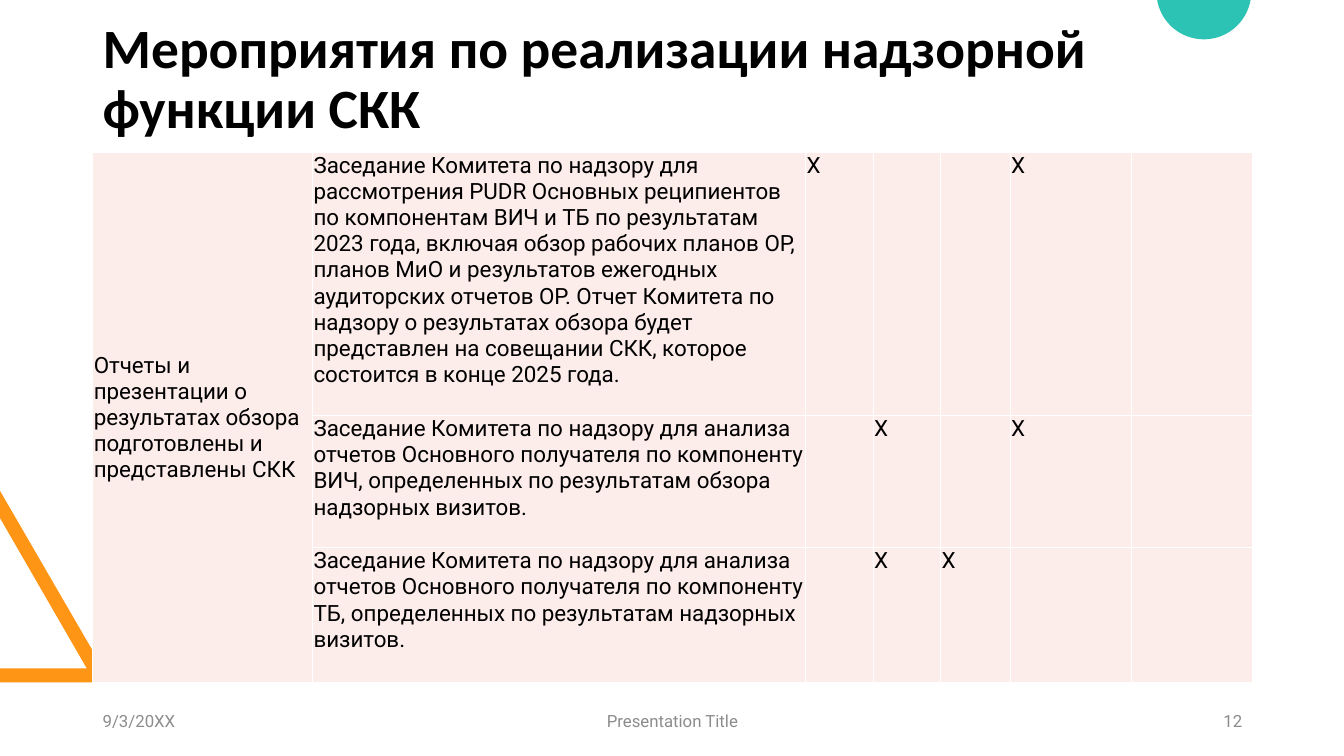
from dataclasses import dataclass
from math import acos, cos, pi, sin

from lxml.etree import SubElement
from pptx import Presentation
from pptx.dml.color import RGBColor
from pptx.enum.text import MSO_ANCHOR as Anchor, PP_ALIGN as Align
from pptx.oxml.ns import qn
from pptx.util import Inches, Pt


@dataclass(frozen=True)
class Theme:
    heading_font: str = "Calibri"
    body_font: str = "Roboto"
    heading_size: float = 39.6
    table_size: float = 16
    footer_size: float = 12
    text: str = "000000"
    muted: str = "8C8C8C"
    cell: str = "FCECEA"
    border: str = "FFFFFF"
    orange: str = "FF9514"
    teal: str = "2CC3B4"


THEME = Theme()
WIDTH, HEIGHT = 13.33, 7.5
LEFT, CONTENT_WIDTH = 0.92, 11.5

TITLE = "Мероприятия по реализации надзорной функции СКК"
RESULT = "Отчеты и презентации о результатах обзора подготовлены и представлены СКК"
ACTIVITIES = [
    ("Заседание Комитета по надзору для рассмотрения PUDR Основных реципиентов "
     "по компонентам ВИЧ и ТБ по результатам 2023 года, включая обзор рабочих планов ОР, "
     "планов МиО и результатов ежегодных аудиторских отчетов ОР. Отчет Комитета по надзору "
     "о результатах обзора будет представлен на совещании СКК, которое состоится в конце 2025 года.",
     {2, 5}),
    ("Заседание Комитета по надзору для анализа отчетов Основного получателя "
     "по компоненту ВИЧ, определенных по результатам обзора надзорных визитов.", {3, 5}),
    ("Заседание Комитета по надзору для анализа отчетов Основного получателя "
     "по компоненту ТБ, определенных по результатам надзорных визитов.", {3, 4}),
]
COLUMN_WIDTHS = [2.18, 4.89, 0.67, 0.67, 0.69, 1.2, 1.2]
ROW_HEIGHTS = [2.61, 1.31, 1.31]


def style_text(text_frame, font, size, color, bold=False):
    for paragraph in text_frame.paragraphs:
        for run in paragraph.runs:
            run.font.name = font
            run.font.size = Pt(size)
            run.font.bold = bold
            run.font.color.rgb = RGBColor.from_string(color)


def add_text(slide, box, text, font, size, color, align=Align.LEFT, bold=False):
    shape = slide.shapes.add_textbox(*map(Inches, box))
    frame = shape.text_frame
    frame.word_wrap = True
    frame.vertical_anchor = Anchor.MIDDLE
    frame.text = text
    frame.paragraphs[0].alignment = align
    style_text(frame, font, size, color, bold)
    return frame


def add_outline(slide, contours, color):
    (start, *rest), *holes = contours
    builder = slide.shapes.build_freeform(*map(Inches, start), scale=1.0)
    builder.add_line_segments([tuple(map(Inches, point)) for point in rest])
    for first, *others in holes:
        builder.move_to(*map(Inches, first))
        builder.add_line_segments([tuple(map(Inches, point)) for point in others])
    shape = builder.convert_to_shape()
    shape.shadow.inherit = False
    shape.fill.solid()
    shape.fill.fore_color.rgb = RGBColor.from_string(color)
    shape.line.fill.background()


def add_arc_points(center, radius, start, end, steps):
    angles = [start + (end - start) * step / steps for step in range(steps + 1)]
    return [(center[0] + radius * cos(angle), center[1] + radius * sin(angle))
            for angle in angles]


def add_decorations(slide):
    corner = add_arc_points((0.98, 6.7), 0.07, -pi / 6, pi / 2, 8)
    triangle = [(0, 6.77), (0, 6.63), (0.86, 6.63), (0, 5.14), (0, 4.87), *corner]
    add_outline(slide, [triangle], THEME.orange)

    radius, depth = 0.47, 0.39
    edge = acos((radius - depth) / radius)
    segment = add_arc_points((11.94, depth - radius), radius,
                             pi / 2 - edge, pi / 2 + edge, 40)
    add_outline(slide, [segment], THEME.teal)


def add_title(slide, box):
    frame = add_text(slide, box, TITLE, THEME.heading_font, THEME.heading_size,
                     THEME.text, bold=True)
    frame.margin_bottom = Inches(0.7)
    frame.paragraphs[0].line_spacing = 0.9


def style_cell(cell):
    cell.fill.solid()
    cell.fill.fore_color.rgb = RGBColor.from_string(THEME.cell)
    cell.margin_left = cell.margin_top = cell.margin_right = Inches(0.01)
    cell.margin_bottom = 0
    style_text(cell.text_frame, THEME.body_font, THEME.table_size, THEME.text)
    properties = cell._tc.get_or_add_tcPr()
    for index, side in enumerate(("lnL", "lnR", "lnT", "lnB")):
        line = SubElement(properties, qn(f"a:{side}"), w=str(Pt(1)))
        fill = SubElement(line, qn("a:solidFill"))
        SubElement(fill, qn("a:srgbClr"), val=THEME.border)
        properties.insert(index, line)


def add_activity_table(slide, box):
    table = slide.shapes.add_table(len(ROW_HEIGHTS), len(COLUMN_WIDTHS),
                                   *map(Inches, box)).table
    table.first_row = table.horz_banding = False
    for column, width in zip(table.columns, COLUMN_WIDTHS):
        column.width = Inches(width)
    for row, height in zip(table.rows, ROW_HEIGHTS):
        row.height = Inches(height)
    result_cell = table.cell(0, 0)
    result_cell.merge(table.cell(len(ROW_HEIGHTS) - 1, 0))
    result_cell.text_frame.text = RESULT
    result_cell.vertical_anchor = Anchor.MIDDLE
    for row, (activity, marked_columns) in enumerate(ACTIVITIES):
        table.cell(row, 1).text_frame.text = activity
        for column in marked_columns:
            table.cell(row, column).text_frame.text = "Х"
    for cell in table.iter_cells():
        style_cell(cell)


def add_footer(slide, box):
    left, top, width, height = box
    side, middle = 3, 4.5
    parts = [
        ("9/3/20XX", left, side, Align.LEFT),
        ("Presentation Title", left + (width - middle) / 2, middle, Align.CENTER),
        ("12", left + width - side, side, Align.RIGHT),
    ]
    for text, part_left, part_width, align in parts:
        add_text(slide, (part_left, top, part_width, height), text,
                 THEME.body_font, THEME.footer_size, THEME.muted, align)


def main():
    presentation = Presentation()
    presentation.slide_width = Inches(WIDTH)
    presentation.slide_height = Inches(HEIGHT)
    slide = presentation.slides.add_slide(presentation.slide_layouts[6])
    add_decorations(slide)
    add_title(slide, (LEFT, 0.4, CONTENT_WIDTH, 1.45))
    add_footer(slide, (LEFT, 6.95, CONTENT_WIDTH, 0.4))
    add_activity_table(slide, (LEFT, 1.51, CONTENT_WIDTH, sum(ROW_HEIGHTS)))
    presentation.save("out.pptx")


if __name__ == "__main__":
    main()
